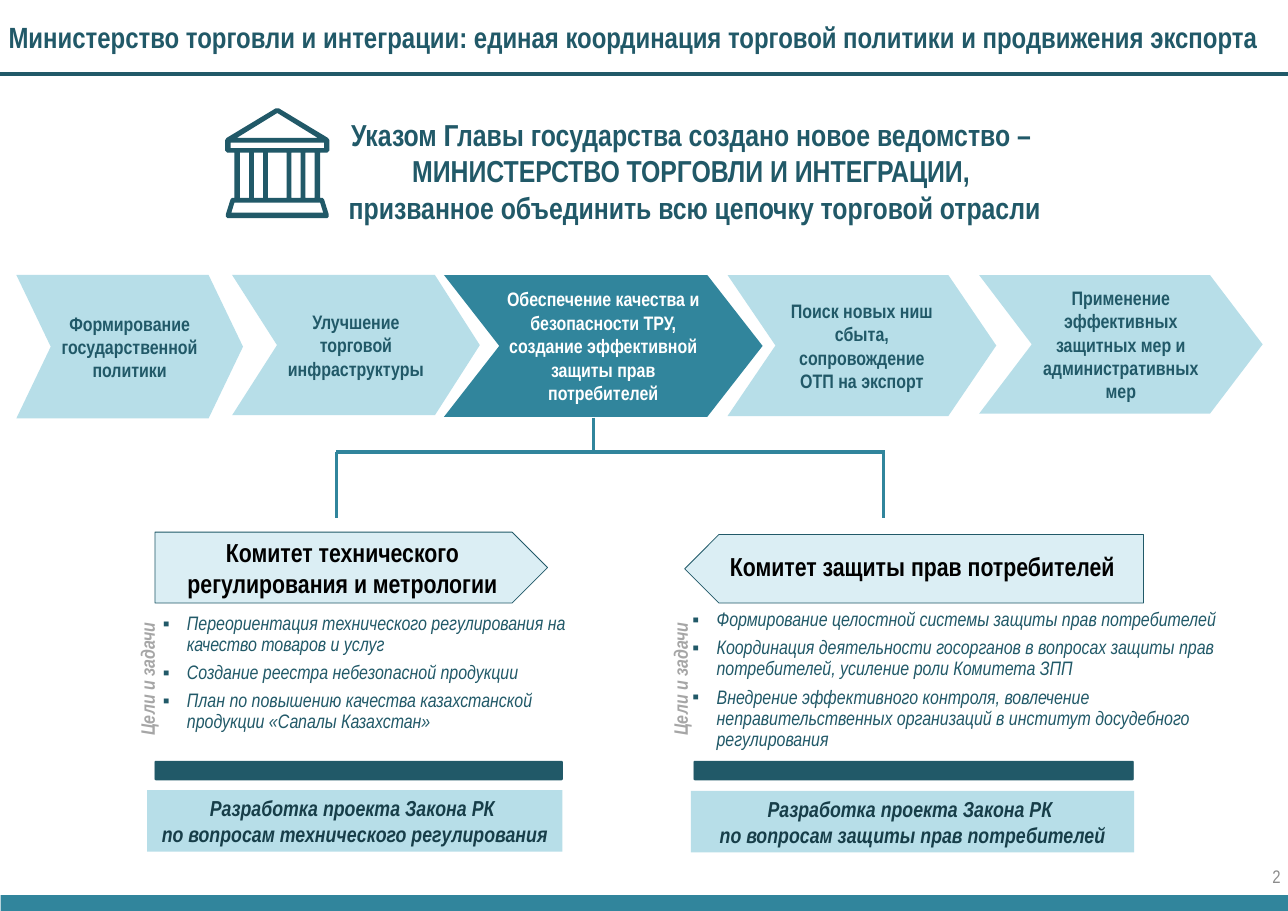
from lxml.etree import SubElement
from pptx import Presentation
from pptx.dml.color import RGBColor
from pptx.enum.shapes import MSO_CONNECTOR, MSO_SHAPE
from pptx.enum.text import MSO_ANCHOR, MSO_AUTO_SIZE, PP_ALIGN
from pptx.oxml.ns import qn
from pptx.util import Inches, Pt

FONT = "Arial Narrow"
A3_WIDTH, A3_HEIGHT = Inches(420 / 25.4), Inches(297 / 25.4)
DARK = RGBColor(0x21, 0x59, 0x68)
TEAL = RGBColor(0x31, 0x85, 0x9C)
LIGHT = RGBColor(0xB7, 0xDE, 0xE8)
PALE = RGBColor(0xDB, 0xEE, 0xF4)
DEEP = RGBColor(0x17, 0x3E, 0x49)
LABEL_GREY = RGBColor(0xA6, 0xA6, 0xA6)
NUMBER_GREY = RGBColor(0x8C, 0x8C, 0x8C)
WHITE = RGBColor(0xFF, 0xFF, 0xFF)
BLACK = RGBColor(0, 0, 0)

# text, left, width, height, point depth, fill, text colour
CHAIN = [
    ("Формирование государственной политики", 0.21, 2.91, 1.84, 0.24, LIGHT, DARK),
    ("Улучшение торговой инфраструктуры", 2.98, 3.18, 1.8, 0.32, LIGHT, DARK),
    ("Обеспечение качества и безопасности ТРУ, создание эффективной защиты прав потребителей",
     5.7, 4.09, 1.82, 0.39, TEAL, WHITE),
    ("Поиск новых ниш сбыта, сопровождение ОТП на экспорт", 9.34, 3.45, 1.81, 0.34, LIGHT, DARK),
    ("Применение эффективных защитных мер и административных мер",
     12.57, 3.64, 1.78, 0.38, LIGHT, DARK),
]
TECHNICAL_GOALS = [
    "Переориентация технического регулирования на качество товаров и услуг",
    "Создание реестра небезопасной продукции",
    "План по повышению качества казахстанской продукции «Сапалы Казахстан»",
]
CONSUMER_GOALS = [
    "Формирование целостной системы защиты прав потребителей",
    "Координация деятельности госорганов в вопросах защиты прав потребителей, "
    "усиление роли Комитета ЗПП",
    "Внедрение эффективного контроля, вовлечение неправительственных организаций "
    "в институт досудебного регулирования",
]


def place(shape, left, top, width, height):
    shape.left, shape.top = Inches(left), Inches(top)
    shape.width, shape.height = Inches(width), Inches(height)


def write(shape, lines, size, color, align=PP_ALIGN.CENTER, bold=True, italic=False,
          anchor=MSO_ANCHOR.MIDDLE, spacing=1.0):
    frame = shape.text_frame
    frame.word_wrap = True
    frame.auto_size = MSO_AUTO_SIZE.NONE
    frame.vertical_anchor = anchor
    frame.text = "\n".join(lines)
    for paragraph in frame.paragraphs:
        paragraph.alignment = align
        paragraph.line_spacing = spacing
        paragraph.space_before = Pt(0)
        for run in paragraph.runs:
            font = run.font
            font.name, font.size, font.color.rgb = FONT, Pt(size), color
            font.bold, font.italic = bold, italic


def add_label(slide, box, lines, size, color, **style):
    label = slide.shapes.add_textbox(*map(Inches, box))
    write(label, lines, size, color, **style)
    return label


def paint(shape, fill, outline=None):
    shape.shadow.inherit = False
    shape.fill.solid()
    shape.fill.fore_color.rgb = fill
    if outline is None:
        shape.line.fill.background()
    else:
        shape.line.color.rgb = outline
        shape.line.width = Pt(0.75)


def add_block(slide, kind, box, fill, outline=None, adjustment=None):
    block = slide.shapes.add_shape(kind, *map(Inches, box))
    paint(block, fill, outline)
    if adjustment is not None:
        block.adjustments[0] = adjustment
    return block


def add_rule(slide, x1, y1, x2, y2, color):
    rule = slide.shapes.add_connector(MSO_CONNECTOR.STRAIGHT, *map(Inches, (x1, y1, x2, y2)))
    rule.line.color.rgb = color
    rule.line.width = Pt(3)
    SubElement(rule.element.spPr, qn("a:effectLst"))


def fill_goals(body, box, goals):
    place(body, *box)
    write(body, goals, 18, DARK, PP_ALIGN.LEFT, bold=False, italic=True,
          anchor=MSO_ANCHOR.TOP, spacing=0.9)
    for paragraph in body.text_frame.paragraphs:
        paragraph.space_after = Pt(6.5)
        properties = paragraph._p.get_or_add_pPr()
        properties.set("marL", str(Inches(0.31)))
        properties.set("indent", str(-Inches(0.31)))
        SubElement(properties, qn("a:buFont"), typeface="Arial")
        SubElement(properties, qn("a:buChar"), char="▪")


def add_ministry_building(slide):
    """Columned building, in hundredths of an inch around its vertical axis."""
    right_side = [(2, 139), (65, 177), (67, 180), (67, 193), (64, 196), (55, 196), (55, 254),
                  (58, 254), (60, 256), (66, 275), (66, 278), (64, 280)]
    left_side = [(-x, y) for x, y in reversed(right_side)]
    contours = [
        right_side + left_side,
        [(0, 145), (52, 177), (-52, 177)],
        [(-60, 183), (60, 183), (60, 190), (-60, 190)],
        [(-55, 260), (55, 260), (59, 273), (-59, 273)],
    ]
    for start, end in [(-48, -36), (-30, -18), (-12, 12), (18, 30), (36, 48)]:
        contours.append([(start, 196), (end, 196), (end, 254), (start, 254)])
    builder = slide.shapes.build_freeform(*contours[0][0], scale=Inches(0.01))
    for number, contour in enumerate(contours):
        if number:
            builder.move_to(*contour[0])
        builder.add_line_segments(contour[1:], close=True)
    paint(builder.convert_to_shape(Inches(3.56), Inches(0)), DARK)


def add_law(slide, bar_left, bar_width, law_box, subject):
    add_block(slide, MSO_SHAPE.ROUNDED_RECTANGLE, (bar_left, 9.77, bar_width, 0.24),
              DARK, DARK, 0.05)
    law = add_block(slide, MSO_SHAPE.RECTANGLE, law_box, LIGHT)
    write(law, ["Разработка проекта Закона РК ", subject], 20, DEEP, italic=True)


def main():
    presentation = Presentation()
    presentation.slide_width, presentation.slide_height = A3_WIDTH, A3_HEIGHT
    slide = presentation.slides.add_slide(presentation.slide_layouts[3])
    title, technical, consumer = slide.placeholders

    place(title, 0.01, 0.04, 16.55, 0.92)
    write(title, ["Министерство торговли и интеграции: единая координация торговой политики "
                  "и продвижения экспорта"], 27, DARK, PP_ALIGN.LEFT, spacing=0.9)
    add_rule(slide, 0, 0.95, 16.54, 0.95, DARK)

    add_ministry_building(slide)
    add_label(slide, (2.46, 1.38, 12.91, 1.62),
              ["Указом Главы государства создано новое ведомство – ",
               "МИНИСТЕРСТВО ТОРГОВЛИ И ИНТЕГРАЦИИ, ",
               "призванное объединить всю цепочку торговой отрасли"], 28, DARK)

    for text, left, width, height, depth, fill, color in CHAIN:
        link = add_block(slide, MSO_SHAPE.CHEVRON, (left, 3.53, width, height), fill,
                         adjustment=depth)
        write(link, [text], 18, color)

    add_rule(slide, 7.62, 5.36, 7.62, 5.8, TEAL)
    add_rule(slide, 4.32, 5.8, 11.36, 5.8, TEAL)
    for branch in (4.32, 11.34):
        add_rule(slide, branch, 5.8, branch, 6.65, TEAL)

    committee = add_block(slide, MSO_SHAPE.PENTAGON, (1.99, 6.83, 5.04, 0.91), PALE, DARK)
    write(committee, ["Комитет технического регулирования и метрологии"], 24, BLACK)
    mirrored = add_block(slide, MSO_SHAPE.PENTAGON, (8.79, 6.86, 5.89, 0.88), PALE, DARK)
    mirrored.rotation = 180
    add_label(slide, (9.23, 7.02, 5.22, 0.5), ["Комитет защиты прав потребителей"], 24, BLACK)

    fill_goals(technical, (1.99, 7.83, 5.41, 1.68), TECHNICAL_GOALS)
    fill_goals(consumer, (8.79, 7.78, 6.99, 1.95), CONSUMER_GOALS)
    for left in (0.82, 7.66):
        goals_label = add_label(slide, (left, 8.27, 2.14, 0.4), ["Цели и задачи"], 18,
                                LABEL_GREY, align=PP_ALIGN.LEFT, italic=True)
        goals_label.rotation = 270

    add_law(slide, 1.99, 5.23, (1.89, 10.14, 5.33, 0.79),
            "по вопросам технического регулирования")
    add_law(slide, 8.91, 5.64, (8.87, 10.15, 5.69, 0.79),
            "по вопросам защиты прав потребителей")

    add_block(slide, MSO_SHAPE.RECTANGLE, (0.01, 11.49, 16.54, 0.22), TEAL)
    add_label(slide, (12.82, 10.94, 3.72, 0.62), ["2"], 16.8, NUMBER_GREY,
              align=PP_ALIGN.RIGHT, bold=False)
    presentation.save("out.pptx")


if __name__ == "__main__":
    main()
